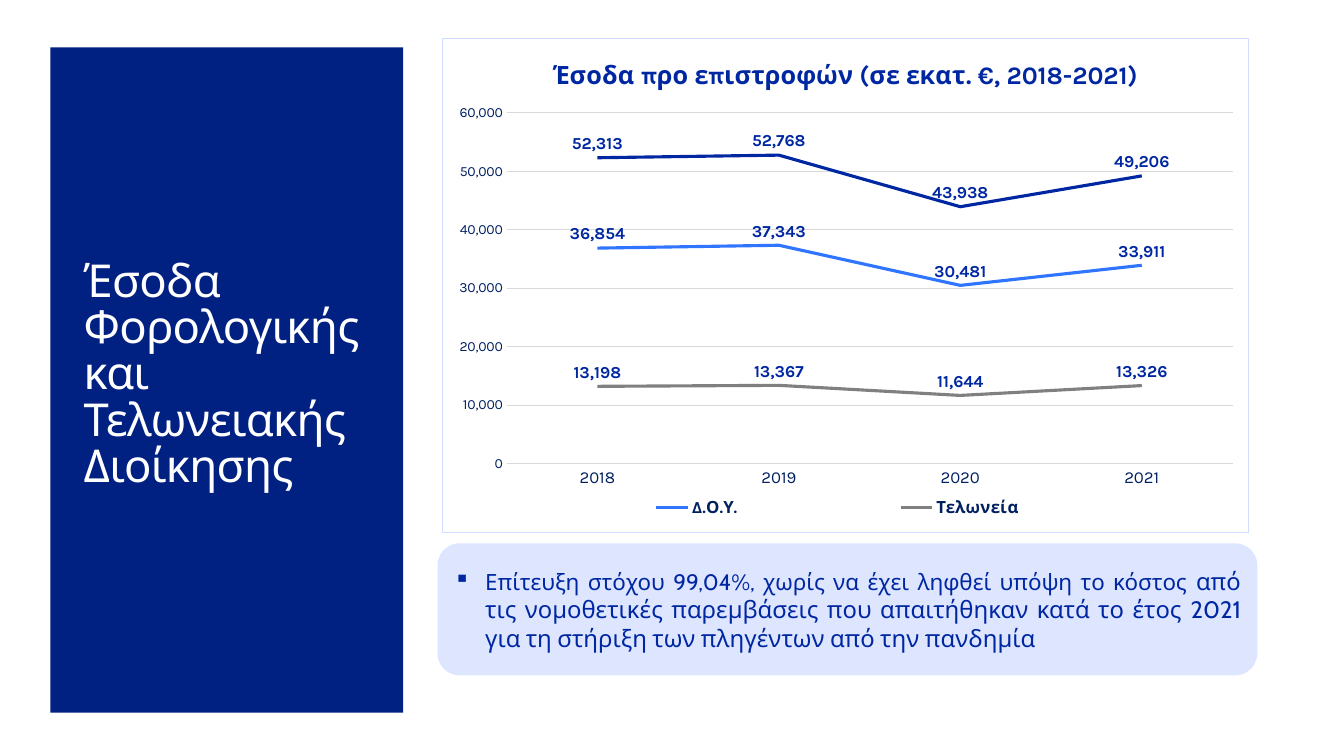
"""Build the slide on tax and customs revenue."""
from lxml import etree
from pptx import Presentation
from pptx import util as u
from pptx.chart.data import CategoryChartData
from pptx.dml.color import RGBColor
from pptx.enum import chart as kinds, shapes, text
from pptx.oxml import parse_xml
from pptx.oxml.ns import nsdecls, qn

PX = 9144
BLUE, NAVY, GRID = "0027A2", "002060", "D9D9D9"


def tint(code):
    return RGBColor.from_string(code)


def write(item, words=None, size=12, hue=BLUE, face="Karla", bold=False):
    if words:
        item = item.add_run()
        item.text = words
    font = item.font
    font.size, font.name, font.bold = u.Pt(size), face, bold
    font.color.rgb = tint(hue)
    return item


deck = Presentation()
deck.slide_width, deck.slide_height = 1333 * PX, 750 * PX
slide = deck.slides.add_slide(deck.slide_layouts[5])

panel = slide.shapes.add_shape(shapes.MSO_SHAPE.RECTANGLE, 50 * PX, 47 * PX, 350 * PX, 660 * PX)
panel.shadow.inherit = False
panel.fill.solid()
panel.fill.fore_color.rgb = tint("002082")
panel.line.fill.background()
slide.shapes._spTree.insert(2, panel._element)

title = slide.shapes.title
title.left, title.top, title.width, title.height = 73 * PX, 269 * PX, 308 * PX, 208 * PX
frame = title.text_frame
frame.word_wrap = True
frame.auto_size = text.MSO_AUTO_SIZE.NONE
frame.vertical_anchor = text.MSO_ANCHOR.MIDDLE
para = frame.paragraphs[0]
para.alignment = text.PP_ALIGN.LEFT
para.line_spacing = 0.85
run = write(para, "Έσοδα Φορολογικής και Τελωνειακής Διοίκησης", size=32.4, hue="FFFFFF", face="Cabin")
run._r.get_or_add_rPr().set("spc", "-50")

rows = [
    ("Δ.Ο.Υ.", "2F75FF", (36854, 37343, 30481, 33911)),
    ("Τελωνεία", "808080", (13198, 13367, 11644, 13326)),
    ("Σύνολο εσόδων", BLUE, (52313, 52768, 43938, 49206)),
]
data = CategoryChartData(number_format="#,##0")
data.categories = ["2018", "2019", "2020", "2021"]
for name, hue, vals in rows:
    data.add_series(name, vals)
chart = slide.shapes.add_chart(
    kinds.XL_CHART_TYPE.LINE, 438 * PX, 38 * PX, 801 * PX, 491 * PX, data).chart
write(chart, size=10, hue="000000", face="Calibri")
chart.has_title = True
write(chart.chart_title.text_frame.paragraphs[0],
      "Έσοδα προ επιστροφών (σε εκατ. €, 2018-2021)", size=18, bold=True)

for line, (name, hue, vals) in zip(chart.plots[0].series, rows):
    line.smooth = False
    line.format.line.color.rgb = tint(hue)
    line.format.line.width = u.Pt(2.25)
    tags = line.data_labels
    tags.show_value = True
    tags.number_format, tags.number_format_is_linked = "#,##0", False
    tags.position = kinds.XL_LABEL_POSITION.ABOVE
    write(tags.font and tags, bold=True)

base, scale = chart.category_axis, chart.value_axis
for axis, size in ((base, 12), (scale, 10)):
    axis.major_tick_mark = axis.minor_tick_mark = kinds.XL_TICK_MARK.NONE
    write(axis.tick_labels, size=size, hue=NAVY)
scale.minimum_scale, scale.maximum_scale, scale.major_unit = 0, 60000, 10000
scale.tick_labels.number_format = "#,##0"
scale.tick_labels.number_format_is_linked = False
scale.format.line.fill.background()
for rule in (base.format.line, scale.major_gridlines.format.line):
    rule.color.rgb = tint(GRID)
    rule.width = u.Pt(0.75)

chart.has_legend = True
key = chart.legend
key.position = kinds.XL_LEGEND_POSITION.BOTTOM
key.include_in_layout = False
write(key, hue=NAVY, bold=True)
key._element.insert(1, parse_xml(
    f'<c:legendEntry {nsdecls("c")}><c:idx val="2"/><c:delete val="1"/></c:legendEntry>'))

space = chart._chartSpace
plot = space.find(".//" + qn("c:plotArea"))
for part, spot, inner, box in (
        (plot, 0, True, (0.08, 0.15, 0.9, 0.71)),
        (key._element, 2, False, (0.07, 0.92, 0.84, 0.06))):
    for old in part.findall(qn("c:layout")):
        part.remove(old)
    lay = parse_xml(f'<c:layout {nsdecls("c")}><c:manualLayout/></c:layout>')
    marks = [("layoutTarget", "inner")] if inner else []
    marks += [("xMode", "edge"), ("yMode", "edge"), *zip("xywh", box)]
    for tag, val in marks:
        etree.SubElement(lay[0], qn("c:" + tag)).set("val", str(val))
    part.insert(spot, lay)
space.find(qn("c:chart")).addnext(parse_xml(
    f'<c:spPr {nsdecls("c", "a")}><a:solidFill><a:srgbClr val="FFFFFF"/></a:solidFill>'
    '<a:ln w="9525"><a:solidFill><a:srgbClr val="D1DCFF"/></a:solidFill></a:ln></c:spPr>'))

note = slide.shapes.add_shape(
    shapes.MSO_SHAPE.ROUNDED_RECTANGLE, 434 * PX, 539 * PX, 813 * PX, 131 * PX)
note.shadow.inherit = False
note.fill.solid()
note.fill.fore_color.rgb = tint("DDE5FF")
note.line.fill.background()
frame = note.text_frame
frame.word_wrap = True
frame.vertical_anchor = text.MSO_ANCHOR.MIDDLE
para = frame.paragraphs[0]
para.alignment = text.PP_ALIGN.JUSTIFY
props = para._p.get_or_add_pPr()
props.set("marL", str(31 * PX))
props.set("indent", str(-31 * PX))
etree.SubElement(props, qn("a:buChar")).set("char", "▪")
for words, size in (
        ("Επίτευξη στόχου 99,04%, χωρίς να έχει ληφθεί υπόψη το κόστος ", 16),
        ("από τις νομοθετικές παρεμβάσεις που απαιτήθηκαν κατά το έτος 2021 "
         "για τη στήριξη των πληγέντων από την πανδημία", 17)):
    write(para, words, size=size, face="Cabin")

deck.save("out.pptx")
